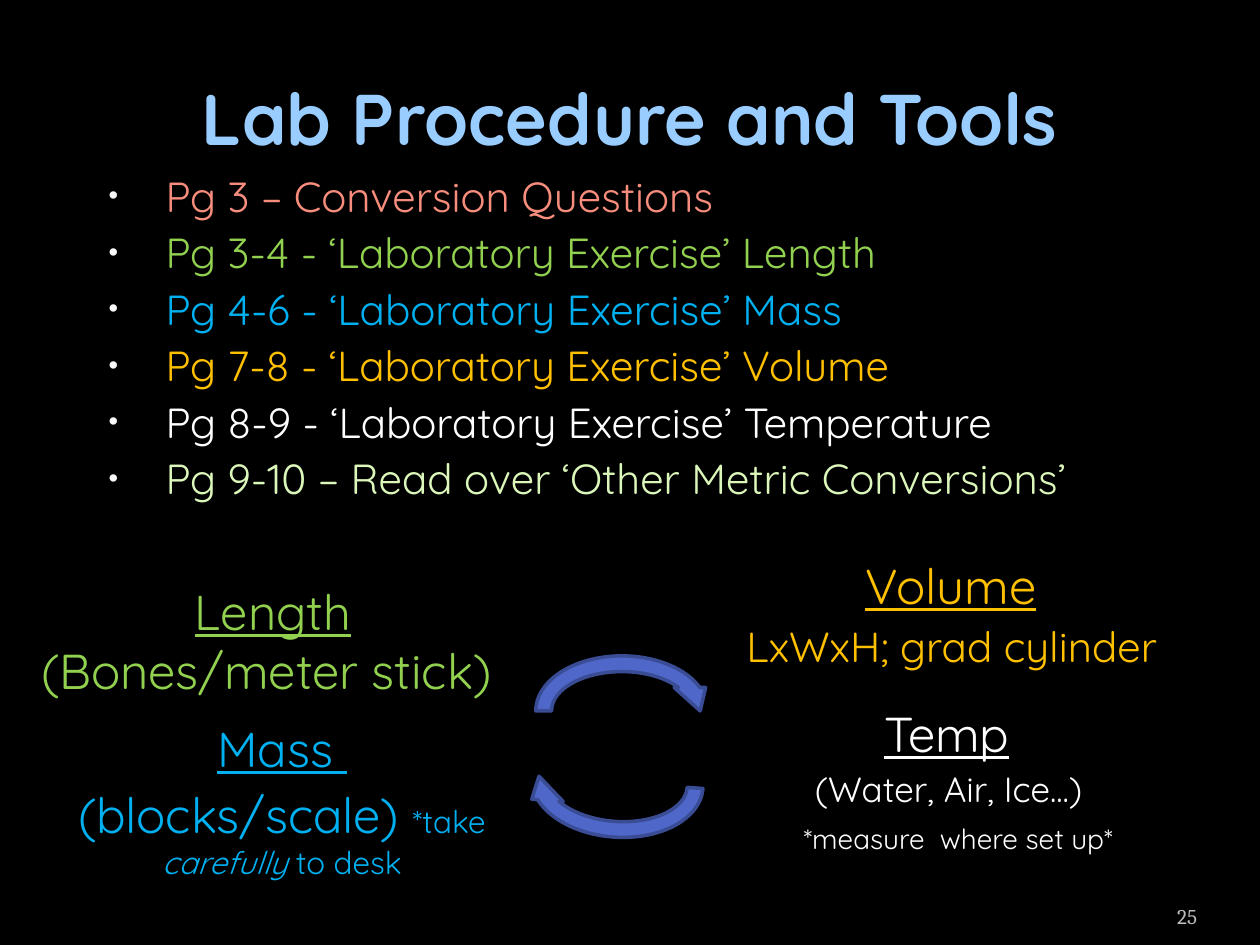
from lxml.etree import SubElement
from pptx import Presentation
from pptx.dml.color import RGBColor
from pptx.enum.shapes import MSO_SHAPE
from pptx.enum.text import MSO_ANCHOR, MSO_AUTO_SIZE, PP_ALIGN
from pptx.oxml.ns import qn
from pptx.util import Pt

PX = 914400 / 126
FONT = "Quicksand"
SPACE_RATIO = 0.144  # space before a paragraph, as a share of its text size
COLORS = {
    "black": "000000", "title": "99CCFF", "bullet": "F9F9F9", "number": "BDBDBD",
    "coral": "F78D7C", "green": "92D050", "blue": "00B0F0", "gold": "FFC000",
    "white": "FFFFFF", "mint": "DCF7BA", "arrow": "4E67C8", "arrow_line": "3A4C94",
}

TITLE = "Lab Procedure and Tools"
STEPS = [
    ("Pg 3 – Conversion Questions", "coral"),
    ("Pg 3-4 - ‘Laboratory Exercise’ Length", "green"),
    ("Pg 4-6 - ‘Laboratory Exercise’ Mass", "blue"),
    ("Pg 7-8 - ‘Laboratory Exercise’ Volume", "gold"),
    ("Pg 8-9 - ‘Laboratory Exercise’ Temperature", "white"),
    ("Pg 9-10 – Read over ‘Other Metric Conversions’", "mint"),
]
# Each station: place, left margin, colour, paragraphs of (text, size, style) runs.
STATIONS = [
    ((582, 549, 689, 134), 62, "gold", [
        [("Volume", 28, "underline"), (" ", 28, "")],
        [("LxWxH; grad cylinder ", 24, "")],
    ]),
    ((13, 575, 515, 84), 5, "green", [
        [("Length", 28, "underline"), ("\v(Bones/meter stick) ", 28, "")],
    ]),
    ((663, 697, 576, 84), 5, "white", [
        [("Temp", 28, "underline"), (" ", 28, "")],
        [("(Water, Air, Ice...) ", 20, "")],
        [(" ", 20, ""), ("*measure  where set up*", 16, "")],
    ]),
    ((20, 712, 519, 126), 5, "blue", [
        [("Mass ", 28, "underline")],
        [("(blocks/scale) ", 28, ""), ("*take ", 18, ""),
         ("carefully", 18, "italic"), (" to desk", 18, "")],
    ]),
]
ARROWS = [((528, 648, 188, 126), 0), ((523, 719, 188, 126), 184.3)]


def px(length):
    return round(length * PX)


def color(name):
    return RGBColor.from_string(COLORS[name])


def place(shape, bounds):
    shape.left, shape.top, shape.width, shape.height = map(px, bounds)


def set_font(font, size, color_name, name=FONT):
    font.name, font.size = name, Pt(size)
    font.color.rgb = color(color_name)


def get_paragraph(frame, index):
    return frame.add_paragraph() if index else frame.paragraphs[0]


def add_text_box(slide, bounds):
    box = slide.shapes.add_textbox(*map(px, bounds))
    box.text_frame.word_wrap = True
    return box.text_frame


def add_bullet(para):
    properties = para._p.get_or_add_pPr()
    properties.set("marL", str(px(76)))
    properties.set("indent", str(px(-57)))
    bullet_color = SubElement(properties, qn("a:buClr"))
    SubElement(bullet_color, qn("a:srgbClr"), val=COLORS["bullet"])
    SubElement(properties, qn("a:buSzPct"), val="65000")
    SubElement(properties, qn("a:buChar"), char="•")


def add_title(slide):
    title = slide.shapes.title
    place(title, (63, 38, 1134, 157))
    frame = title.text_frame
    frame.text = TITLE
    frame.vertical_anchor = MSO_ANCHOR.MIDDLE
    para = frame.paragraphs[0]
    para.alignment = PP_ALIGN.CENTER
    set_font(para.font, 41, "title")
    para.font.bold = True


def add_steps(slide):
    body = slide.placeholders[1]
    place(body, (77, 164, 1106, 369))
    frame = body.text_frame
    frame.auto_size = MSO_AUTO_SIZE.NONE
    for index, (text, color_name) in enumerate(STEPS):
        para = get_paragraph(frame, index)
        para.text = text
        add_bullet(para)
        para.space_before = Pt(24 * SPACE_RATIO if index else 0)
        set_font(para.font, 24, color_name)


def add_station(slide, bounds, margin, color_name, paragraphs):
    frame = add_text_box(slide, bounds)
    for index, spans in enumerate(paragraphs):
        para = get_paragraph(frame, index)
        para.alignment = PP_ALIGN.CENTER
        para._p.get_or_add_pPr().set("marL", str(px(margin)))
        largest = max(size for _, size, _ in spans)
        para.space_before = Pt(largest * SPACE_RATIO if index else 0)
        set_font(para.font, largest, color_name)
        for text, size, style in spans:
            if text.startswith("\v"):
                para.add_line_break()
            span = para.add_run()
            span.text = text.lstrip("\v")
            set_font(span.font, size, color_name)
            span.font.underline = style == "underline"
            span.font.italic = style == "italic"


def add_arrow(slide, bounds, rotation):
    arrow = slide.shapes.add_shape(MSO_SHAPE.CIRCULAR_ARROW, *map(px, bounds))
    arrow.rotation = rotation
    arrow.shadow.inherit = False
    arrow.fill.solid()
    arrow.fill.fore_color.rgb = color("arrow")
    arrow.line.color.rgb = color("arrow_line")
    arrow.line.width = Pt(2)


def add_page_number(slide):
    frame = add_text_box(slide, (1092, 885, 105, 50))
    frame.margin_left = frame.margin_right = 0
    frame.vertical_anchor = MSO_ANCHOR.BOTTOM
    para = frame.paragraphs[0]
    para.text = "25"
    para.alignment = PP_ALIGN.RIGHT
    set_font(para.font, 12, "number", "Cambria")


def main():
    deck = Presentation()
    deck.slide_width, deck.slide_height = px(1260), px(945)
    slide = deck.slides.add_slide(deck.slide_layouts[1])
    slide.background.fill.solid()
    slide.background.fill.fore_color.rgb = color("black")
    add_title(slide)
    add_steps(slide)
    for station in STATIONS:
        add_station(slide, *station)
    for arrow in ARROWS:
        add_arrow(slide, *arrow)
    add_page_number(slide)
    deck.save("out.pptx")


if __name__ == "__main__":
    main()
